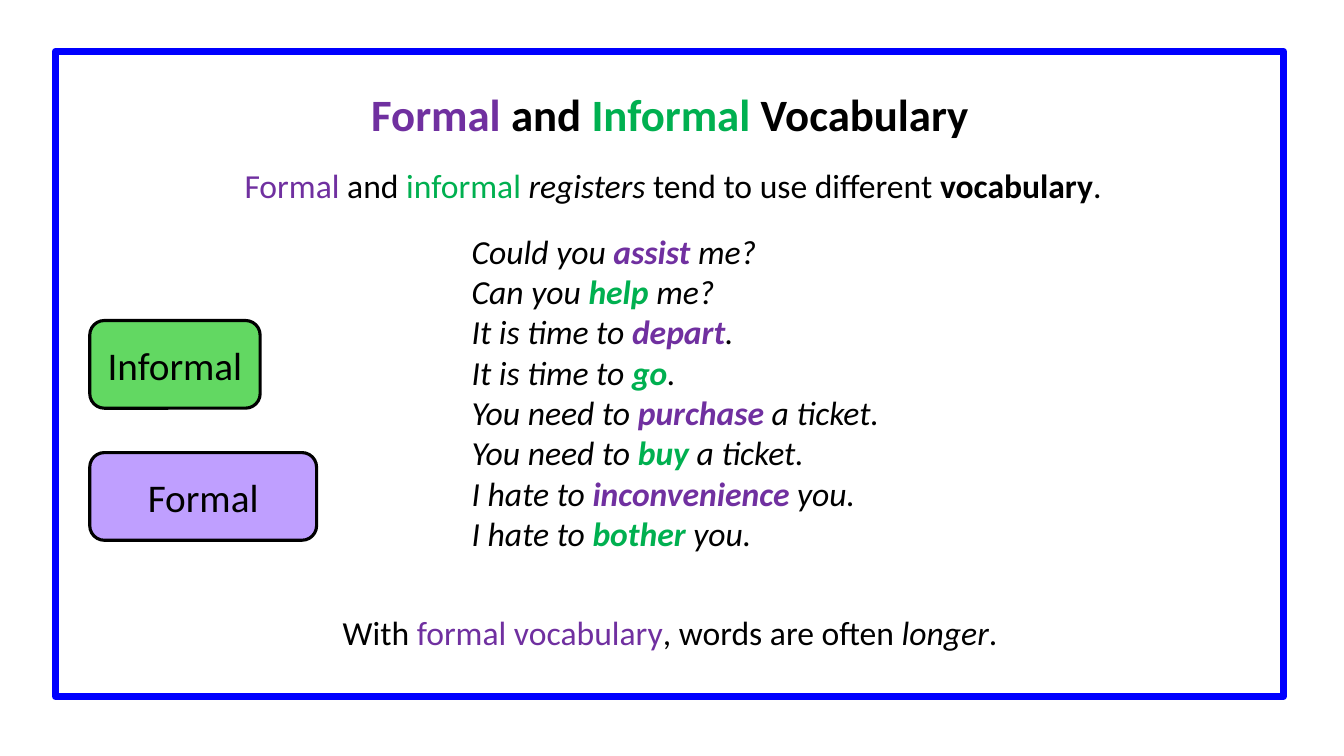
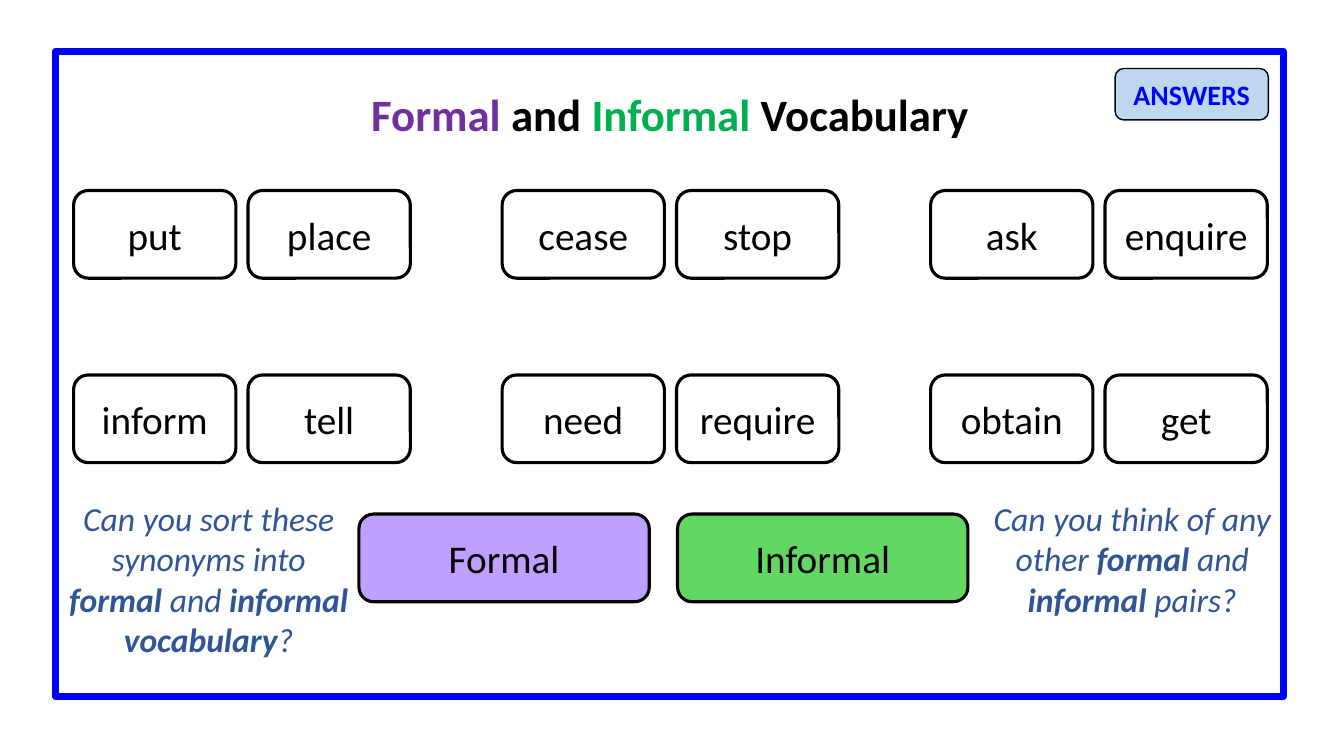
from dataclasses import dataclass

from pptx import Presentation
from pptx.dml.color import RGBColor
from pptx.enum.shapes import MSO_SHAPE as Shape
from pptx.enum.text import MSO_ANCHOR as Anchor, PP_ALIGN as Align
from pptx.util import Emu, Pt

PX = 9144


@dataclass(frozen=True)
class Theme:
    font: str = "Calibri"
    ink: str = "000000"
    paper: str = "FFFFFF"
    frame: str = "0000FF"
    formal: str = "7030A0"
    informal: str = "00B050"
    question: str = "2F5597"
    formal_fill: str = "BF9FFF"
    informal_fill: str = "62D862"
    button_fill: str = "BDD7EE"
    title_size: int = 32
    card_size: int = 28
    body_size: int = 24
    button_size: int = 20
    frame_line: float = 5
    card_line: float = 2.25
    button_line: float = 1


THEME = Theme()
BOLD = {"bold": True}
ITALIC = {"italic": True}
FORMAL = {"color": THEME.formal}
INFORMAL = {"color": THEME.informal}
CARD_HEIGHT = 87


def lengths(*values):
    return [Emu(value * PX) for value in values]


def set_all(target, values):
    for name, value in values.items():
        setattr(target, name, value)


class Builder:
    def __init__(self, theme):
        self.theme = theme
        self.deck = Presentation()
        width, height = lengths(1333, 750)
        set_all(self.deck, {"slide_width": width, "slide_height": height})
        self.page = None

    def new_page(self):
        self.page = self.deck.slides.add_slide(self.deck.slide_layouts[6])
        self.panel(Shape.RECTANGLE, (55, 51, 1218, 640), None,
                   self.theme.frame, self.theme.frame_line)
        self.text((356, 81, 617, 64),
                  [[("Formal", FORMAL), " and ", ("Informal", INFORMAL), " Vocabulary"]],
                  {"size": self.theme.title_size, **BOLD}, wrap=False)

    def fill_text(self, box, paragraphs, style, align, wrap=True):
        frame = box.text_frame
        frame.word_wrap = wrap
        for index, spans in enumerate(paragraphs):
            para = frame.add_paragraph() if index else frame.paragraphs[0]
            para.alignment = align
            for item in spans:
                words, extra = (item, {}) if isinstance(item, str) else item
                look = {"size": self.theme.body_size, "color": self.theme.ink,
                        **style, **extra}
                span = para.add_run()
                span.text = words
                span.font.color.rgb = RGBColor.from_string(look.pop("color"))
                look.update(name=self.theme.font, size=Pt(look["size"]))
                set_all(span.font, look)

    def text(self, area, paragraphs, style, align=Align.CENTER, wrap=True):
        box = self.page.shapes.add_textbox(*lengths(*area))
        self.fill_text(box, paragraphs, style, align, wrap)

    def panel(self, kind, area, fill, line, weight):
        box = self.page.shapes.add_shape(kind, *lengths(*area))
        box.shadow.inherit = False
        if fill:
            box.fill.solid()
            box.fill.fore_color.rgb = RGBColor.from_string(fill)
        else:
            box.fill.background()
        box.line.color.rgb = RGBColor.from_string(line)
        box.line.width = Pt(weight)
        return box

    def card(self, area, label, fill, weight=THEME.card_line, **style):
        box = self.panel(Shape.ROUNDED_RECTANGLE, area, fill, self.theme.ink, weight)
        box.text_frame.vertical_anchor = Anchor.MIDDLE
        self.fill_text(box, [[label]], {"size": self.theme.card_size, **style}, Align.CENTER)

    def formal_card(self, left, top, width):
        self.card((left, top, width, CARD_HEIGHT), "Formal", self.theme.formal_fill)

    def informal_card(self, left, top, width):
        self.card((left, top, width, CARD_HEIGHT), "Informal", self.theme.informal_fill)


def build_examples(build):
    build.new_page()
    build.text((92, 159, 1151, 50),
               [[("Formal", FORMAL), " and ", ("informal ", INFORMAL),
                 ("registers", ITALIC), " tend to use different ",
                 ("vocabulary", BOLD), "."]], {})
    examples = [
        ("Could you ", "assist", " me?"),
        ("Can you ", "help", " me?"),
        ("It is time to ", "depart", "."),
        ("It is time to ", "go", "."),
        ("You need to ", "purchase", " a ticket."),
        ("You need to ", "buy", " a ticket."),
        ("I hate to ", "inconvenience", " you."),
        ("I hate to ", "bother", " you."),
    ]
    sentences = [
        [start, (word, {**(INFORMAL if index % 2 else FORMAL), **BOLD}), end]
        for index, (start, word, end) in enumerate(examples)
    ]
    build.text((458, 224, 450, 333), sentences, ITALIC, Align.LEFT)
    build.text((89, 602, 1151, 50),
               [["With ", ("formal vocabulary", FORMAL), ", words are often ",
                 ("longer", ITALIC), "."]], {})
    build.informal_card(89, 318, 169)
    build.formal_card(89, 449, 225)


def build_sorting(build):
    build.new_page()
    theme = build.theme
    rows = [
        [("put", "place"), ("cease", "stop"), ("ask", "enquire")],
        [("inform", "tell"), ("need", "require"), ("obtain", "get")],
    ]
    for row, pairs in enumerate(rows):
        for column, pair in enumerate(pairs):
            for side, word in enumerate(pair):
                left = 73 + 425 * column + 173 * side
                build.card((left, 189 + 183 * row, 161, CARD_HEIGHT), word, theme.paper)
    build.formal_card(356, 510, 288)
    build.informal_card(672, 510, 288)
    question = {"color": theme.question, **ITALIC}
    build.text((55, 489, 304, 172),
               [["Can you sort these synonyms into ", ("formal", BOLD), " and ",
                 ("informal vocabulary", BOLD), "?"]], question)
    build.text((940, 489, 366, 131),
               [["Can you think of any other ", ("formal", BOLD), " and ",
                 ("informal", BOLD), " pairs?"]], question)
    build.card((1106, 68, 152, 51), "ANSWERS", theme.button_fill, theme.button_line,
               size=theme.button_size, color=theme.frame, **BOLD)


def main():
    build = Builder(THEME)
    build_examples(build)
    build_sorting(build)
    build.deck.save("out.pptx")


if __name__ == "__main__":
    main()
